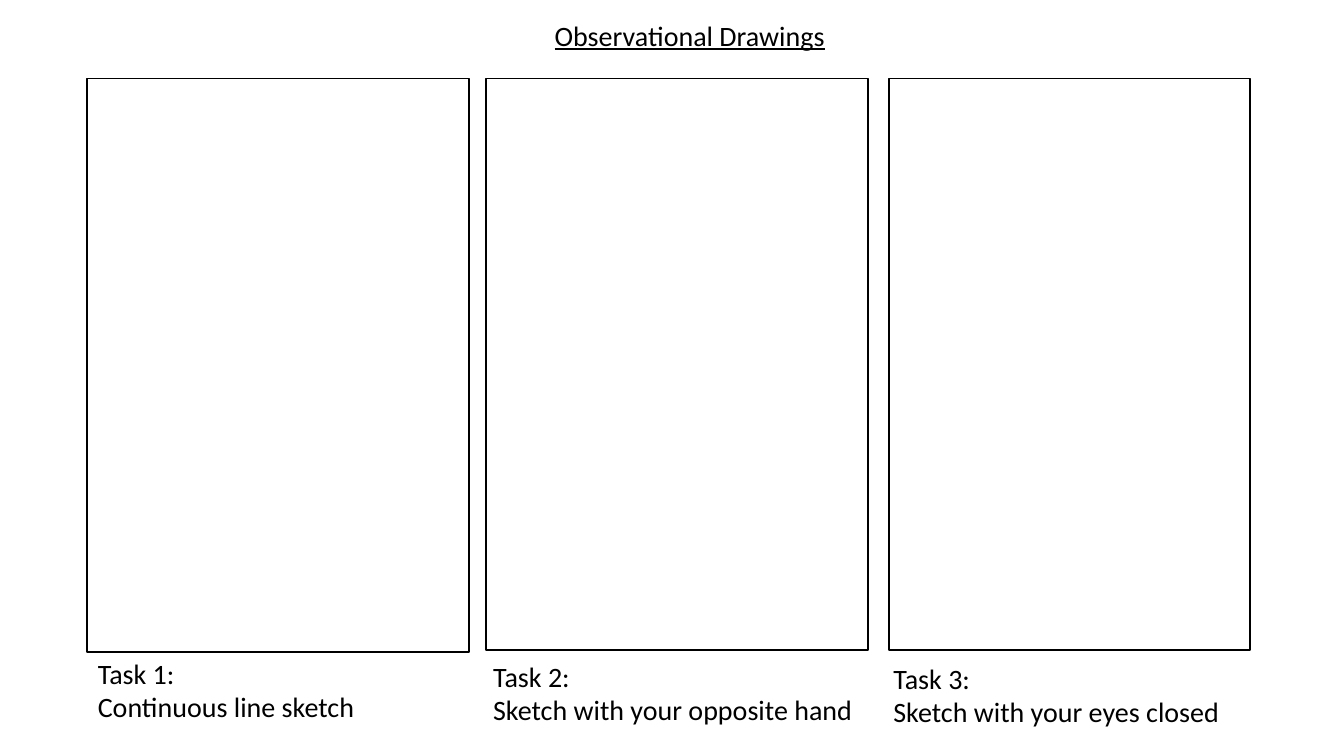
from dataclasses import dataclass

from pptx import Presentation
from pptx import util as u
from pptx.dml.color import RGBColor
from pptx.enum import shapes, text

TITLE = "Observational Drawings"
TASKS = [
    {"lines": ("Task 1:", "Continuous line sketch"),
     "frame": (0.86, 3.79, 5.69), "caption": (0.93, 6.47, 3.64)},
    {"lines": ("Task 2:", "Sketch with your opposite hand"),
     "frame": (4.82, 3.79, 5.67), "caption": (4.85, 6.5, 3.79)},
    {"lines": ("Task 3:", "Sketch with your eyes closed"),
     "frame": (8.82, 3.58, 5.67), "caption": (8.82, 6.52, 3.64)},
]
TITLE_AREA = (3.52, 0.14, 6.64, 0.63)
FRAME_TOP = 0.78
CAPTION_HEIGHT = 1


@dataclass(frozen=True)
class Theme:
    ink: RGBColor = RGBColor(0, 0, 0)
    font: str = "Calibri"
    size: int = 20
    outline: float = 1.25
    inset: float = 0.04


THEME = Theme()


def add_text(page, area, lines, align=text.PP_ALIGN.LEFT, underline=False):
    box = page.shapes.add_textbox(*map(u.Inches, area))
    frame = box.text_frame
    frame.word_wrap = True
    frame.margin_left = frame.margin_right = u.Inches(THEME.inset)
    frame.margin_top = frame.margin_bottom = u.Inches(THEME.inset)
    for index, line in enumerate(lines):
        para = frame.add_paragraph() if index else frame.paragraphs[0]
        para.alignment = align
        span = para.add_run()
        span.text = line
        span.font.name = THEME.font
        span.font.size = u.Pt(THEME.size)
        span.font.color.rgb = THEME.ink
        span.font.underline = underline


def add_drawing_frame(page, left, width, height):
    area = (left, FRAME_TOP, width, height)
    box = page.shapes.add_shape(shapes.MSO_SHAPE.RECTANGLE, *map(u.Inches, area))
    box.shadow.inherit = False
    box.fill.background()
    box.line.color.rgb = THEME.ink
    box.line.width = u.Pt(THEME.outline)


def main():
    deck = Presentation()
    deck.slide_width, deck.slide_height = u.Inches(13.33), u.Inches(7.5)
    page = deck.slides.add_slide(deck.slide_layouts[6])
    add_text(page, TITLE_AREA, [TITLE], text.PP_ALIGN.CENTER, underline=True)
    for task in TASKS:
        add_drawing_frame(page, *task["frame"])
        add_text(page, (*task["caption"], CAPTION_HEIGHT), task["lines"])
    deck.save("out.pptx")


if __name__ == "__main__":
    main()
